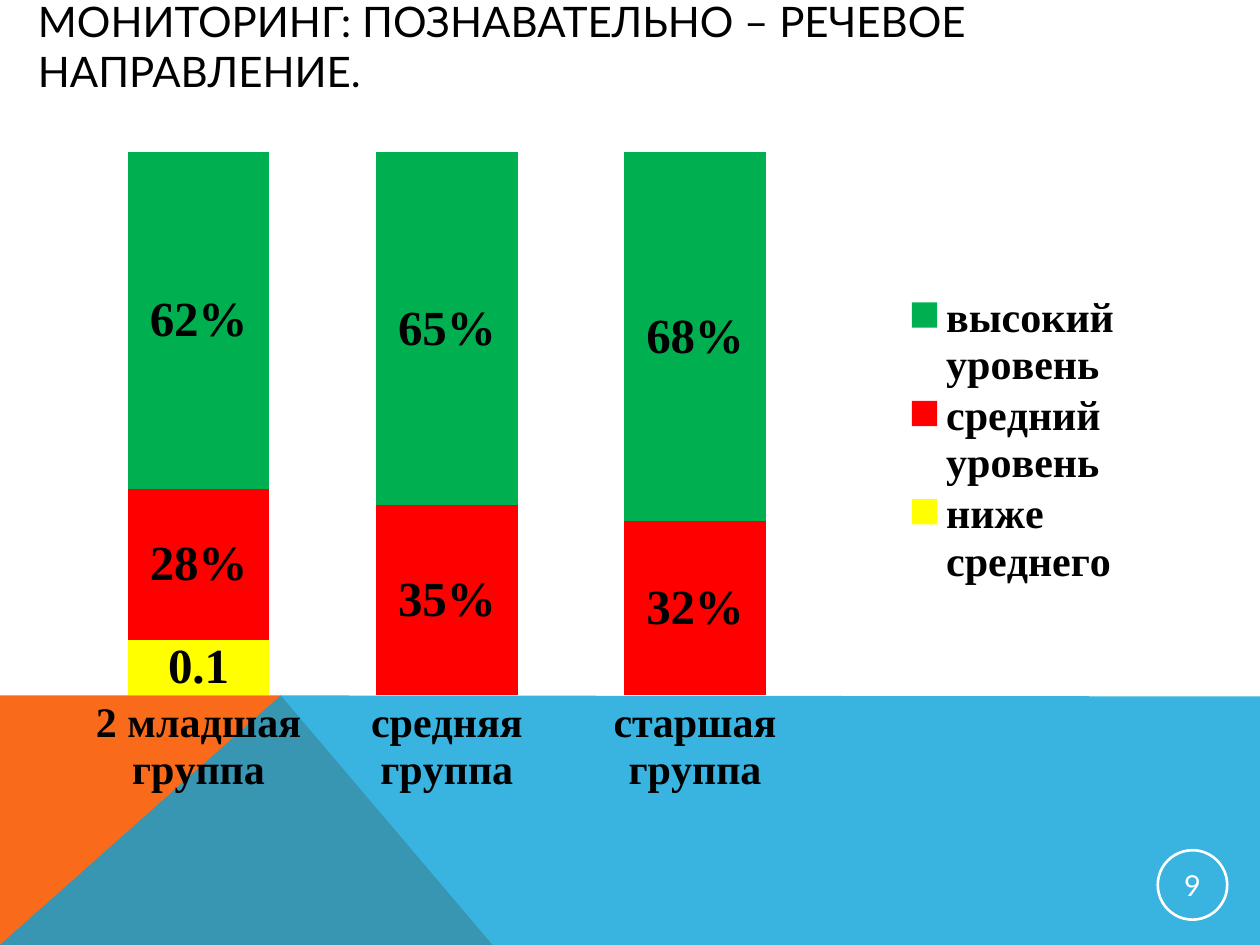
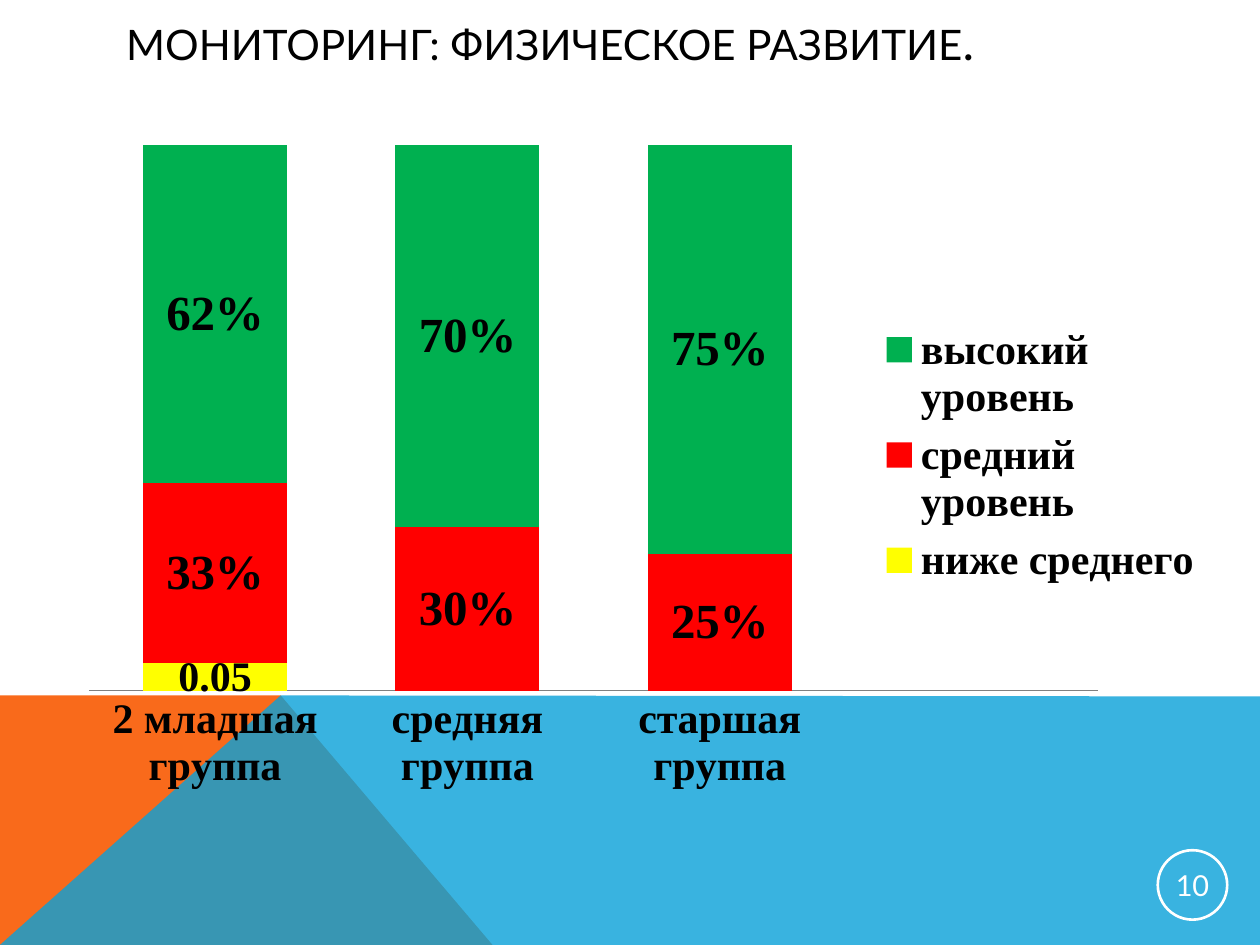
from dataclasses import dataclass

from pptx import Presentation
from pptx.chart.data import CategoryChartData
from pptx.dml.color import RGBColor
from pptx.enum.chart import XL_CHART_TYPE, XL_LEGEND_POSITION, XL_TICK_MARK
from pptx.enum.shapes import MSO_SHAPE
from pptx.enum.text import MSO_ANCHOR, MSO_AUTO_SIZE, PP_ALIGN
from pptx.oxml import parse_xml
from pptx.oxml.ns import nsdecls, qn
from pptx.util import Cm, Pt

STACKED = XL_CHART_TYPE.COLUMN_STACKED
LEGEND_RIGHT = XL_LEGEND_POSITION.RIGHT
NO_TICKS = XL_TICK_MARK.NONE
ELLIPSE = MSO_SHAPE.OVAL
MIDDLE = MSO_ANCHOR.MIDDLE
NO_AUTOFIT = MSO_AUTO_SIZE.NONE
LEFT, CENTER = PP_ALIGN.LEFT, PP_ALIGN.CENTER
TITLE_ONLY = 5


@dataclass(frozen=True)
class Theme:
    black: RGBColor = RGBColor(0x00, 0x00, 0x00)
    white: RGBColor = RGBColor(0xFF, 0xFF, 0xFF)
    gray: RGBColor = RGBColor(0x80, 0x80, 0x80)
    orange: RGBColor = RGBColor(0xF9, 0x6A, 0x1B)
    blue: RGBColor = RGBColor(0x08, 0xA1, 0xD9)
    yellow: RGBColor = RGBColor(0xFF, 0xFF, 0x00)
    red: RGBColor = RGBColor(0xFF, 0x00, 0x00)
    green: RGBColor = RGBColor(0x00, 0xB0, 0x50)
    font: str = "Lato"
    chart_font: str = "Times New Roman"
    title_size: float = 24
    title_stop_size: float = 28
    number_size: float = 16.5
    axis_size: float = 24
    label_size: float = 28


THEME = Theme()
SLIDE_WIDTH, SLIDE_HEIGHT = Cm(25.4), Cm(19.05)
GROUPS = ["2 младшая группа", "средняя группа", "старшая группа", ""]
LEVELS = [
    ("ниже среднего", THEME.yellow, "General"),
    ("средний уровень", THEME.red, "0%"),
    ("высокий уровень", THEME.green, "0%"),
]


def style_font(font, size, name=THEME.font, color=THEME.black, bold=False):
    font.size = Pt(size)
    font.name = name
    font.bold = bold
    font.color.rgb = color


# Bands shared by all slides
def add_band(slide, layout, points, color, opacity=100):
    """Draw a filled outline and move it to the back of the layout."""
    corners = [(Cm(x), Cm(y)) for x, y in points]
    builder = slide.shapes.build_freeform(*corners[0])
    builder.add_line_segments(corners[1:], close=True)
    band = builder.convert_to_shape()
    band.shadow.inherit = False
    band.fill.solid()
    band.fill.fore_color.rgb = color
    band.line.fill.background()
    if opacity < 100:
        color_element = band.element.spPr.find(qn("a:solidFill"))[0]
        color_element.append(parse_xml(
            f'<a:alpha {nsdecls("a")} val="{opacity * 1000}"/>'))
    layout.shapes.element.insert_element_before(
        band.element, "p:sp", "p:extLst")


def add_bands(slide, layout):
    top, bottom, right, peak, foot = 14.02, 19.05, 25.4, 5.66, 9.93
    # Each band goes in front of the layout placeholders and of the last band
    add_band(slide, layout,
             [(0, bottom), (peak, top), (right, top + 0.02), (right, bottom)],
             THEME.blue, opacity=80)
    add_band(slide, layout,
             [(0, bottom), (0, top), (peak, top), (foot, bottom)], THEME.orange)


# Title and slide number
def set_title(slide, text, left, top, width, height, large_stop):
    title = slide.shapes.title
    title.left, title.top = Cm(left), Cm(top)
    title.width, title.height = Cm(width), Cm(height)
    frame = title.text_frame
    frame.word_wrap = True
    frame.auto_size = NO_AUTOFIT
    frame.vertical_anchor = MIDDLE
    paragraph = frame.paragraphs[0]
    paragraph.alignment = LEFT
    style_font(paragraph.font, THEME.title_size)
    paragraph.add_run().text = text
    stop = paragraph.add_run()
    stop.text = "."
    if large_stop:
        stop.font.size = Pt(THEME.title_stop_size)


def add_slide_number(slide, number):
    circle = slide.shapes.add_shape(
        ELLIPSE, Cm(23.34), Cm(17.14), Cm(1.4), Cm(1.4))
    circle.shadow.inherit = False
    circle.fill.background()
    circle.line.color.rgb = THEME.white
    circle.line.width = Pt(1.5)
    frame = circle.text_frame
    frame.margin_left = frame.margin_right = Cm(0.03)
    frame.margin_top = frame.margin_bottom = Cm(0.03)
    frame.word_wrap = False
    frame.vertical_anchor = MIDDLE
    paragraph = frame.paragraphs[0]
    paragraph.text = str(number)
    paragraph.alignment = CENTER
    style_font(paragraph.font, THEME.number_size, color=THEME.white)


# Chart
def make_layout(box, inner=False):
    """Return a manual layout from left, top, width and height fractions."""
    target = '<c:layoutTarget val="inner"/>' if inner else ""
    modes = '<c:xMode val="edge"/><c:yMode val="edge"/>'
    sizes = "".join(f'<c:{tag} val="{value}"/>' for tag, value in zip("xywh", box))
    return parse_xml(f'<c:layout {nsdecls("c")}><c:manualLayout>{target}{modes}'
                     f'{sizes}</c:manualLayout></c:layout>')


def place_chart_parts(chart, plot_box, legend_box):
    plot_area = chart.element.find(".//" + qn("c:plotArea"))
    legend = chart.element.find(".//" + qn("c:legend"))
    for part in (plot_area, legend):
        for automatic in part.findall(qn("c:layout")):
            part.remove(automatic)
    plot_area.insert(0, make_layout(plot_box, inner=True))
    legend.find(qn("c:legendPos")).addnext(make_layout(legend_box))


def style_axes(chart, axis_line):
    category_axis = chart.category_axis
    category_axis.major_tick_mark = category_axis.minor_tick_mark = NO_TICKS
    category_axis.has_major_gridlines = False
    style_font(category_axis.tick_labels.font, THEME.axis_size,
               THEME.chart_font, bold=True)
    line = category_axis.format.line
    if axis_line:
        line.color.rgb = THEME.gray
        line.width = Pt(0.75)
    else:
        line.fill.background()
    value_axis = chart.value_axis
    value_axis.minimum_scale, value_axis.maximum_scale = 0, 1.2
    value_axis.has_major_gridlines = False
    value_axis.visible = False


def style_series(chart, lowest_label_size):
    label_sizes = [lowest_label_size, THEME.label_size, THEME.label_size]
    for series, (_, color, number_format), size in zip(
            chart.plots[0].series, LEVELS, label_sizes):
        series.invert_if_negative = False
        series.format.fill.solid()
        series.format.fill.fore_color.rgb = color
        labels = series.data_labels
        labels.show_value = True
        labels.number_format = number_format
        labels.number_format_is_linked = False
        style_font(labels.font, size, THEME.chart_font, bold=True)


def add_level_chart(slide, box, values, plot_box, legend_box, base_size,
                    lowest_label_size, axis_line):
    data = CategoryChartData()
    data.categories = GROUPS
    for (name, _, _), level_values in zip(LEVELS, values):
        data.add_series(name, level_values)
    chart = slide.shapes.add_chart(
        STACKED, *[Cm(length) for length in box], data).chart
    style_font(chart.font, base_size)
    chart.has_title = False
    chart.has_legend = True
    chart.legend.position = LEGEND_RIGHT
    chart.legend.include_in_layout = False
    style_font(chart.legend.font, THEME.axis_size, THEME.chart_font, bold=True)
    plot = chart.plots[0]
    plot.gap_width, plot.overlap = 75, 100
    plot.vary_by_categories = False
    style_axes(chart, axis_line)
    style_series(chart, lowest_label_size)
    place_chart_parts(chart, plot_box, legend_box)


SLIDES = [
    dict(
        number=9,
        title=dict(text="МОНИТОРИНГ: ПОЗНАВАТЕЛЬНО – РЕЧЕВОЕ НАПРАВЛЕНИЕ",
                   left=0.51, top=0.33, width=24.41, height=1.19,
                   large_stop=False),
        chart=dict(box=(1.5, 0, 22, 17.73),
                   values=[(0.1, None, None, None),
                           (0.28, 0.35, 0.32, None),
                           (0.62, 0.65, 0.68, None)],
                   plot_box=(0, 0.05, 0.91, 0.74),
                   legend_box=(0.76, 0.33, 0.2, 0.34),
                   base_size=20, lowest_label_size=28, axis_line=False),
    ),
    dict(
        number=10,
        title=dict(text="МОНИТОРИНГ: ФИЗИЧЕСКОЕ РАЗВИТИЕ",
                   left=2.29, top=0.33, width=20.88, height=0.99,
                   large_stop=True),
        chart=dict(box=(1.09, -0.86, 23.39, 17.6),
                   values=[(0.05, None, None, None),
                           (0.33, 0.3, 0.25, None),
                           (0.62, 0.7, 0.75, None)],
                   plot_box=(0.03, 0.09, 0.87, 0.75),
                   legend_box=(0.71, 0.41, 0.28, 0.32),
                   base_size=18, lowest_label_size=24, axis_line=True),
    ),
]


def main():
    presentation = Presentation()
    presentation.slide_width, presentation.slide_height = SLIDE_WIDTH, SLIDE_HEIGHT
    layout = presentation.slide_layouts[TITLE_ONLY]
    for index, content in enumerate(SLIDES):
        slide = presentation.slides.add_slide(layout)
        if index == 0:
            add_bands(slide, layout)
        set_title(slide, **content["title"])
        add_slide_number(slide, content["number"])
        add_level_chart(slide, **content["chart"])
    presentation.save("out.pptx")


if __name__ == "__main__":
    main()
